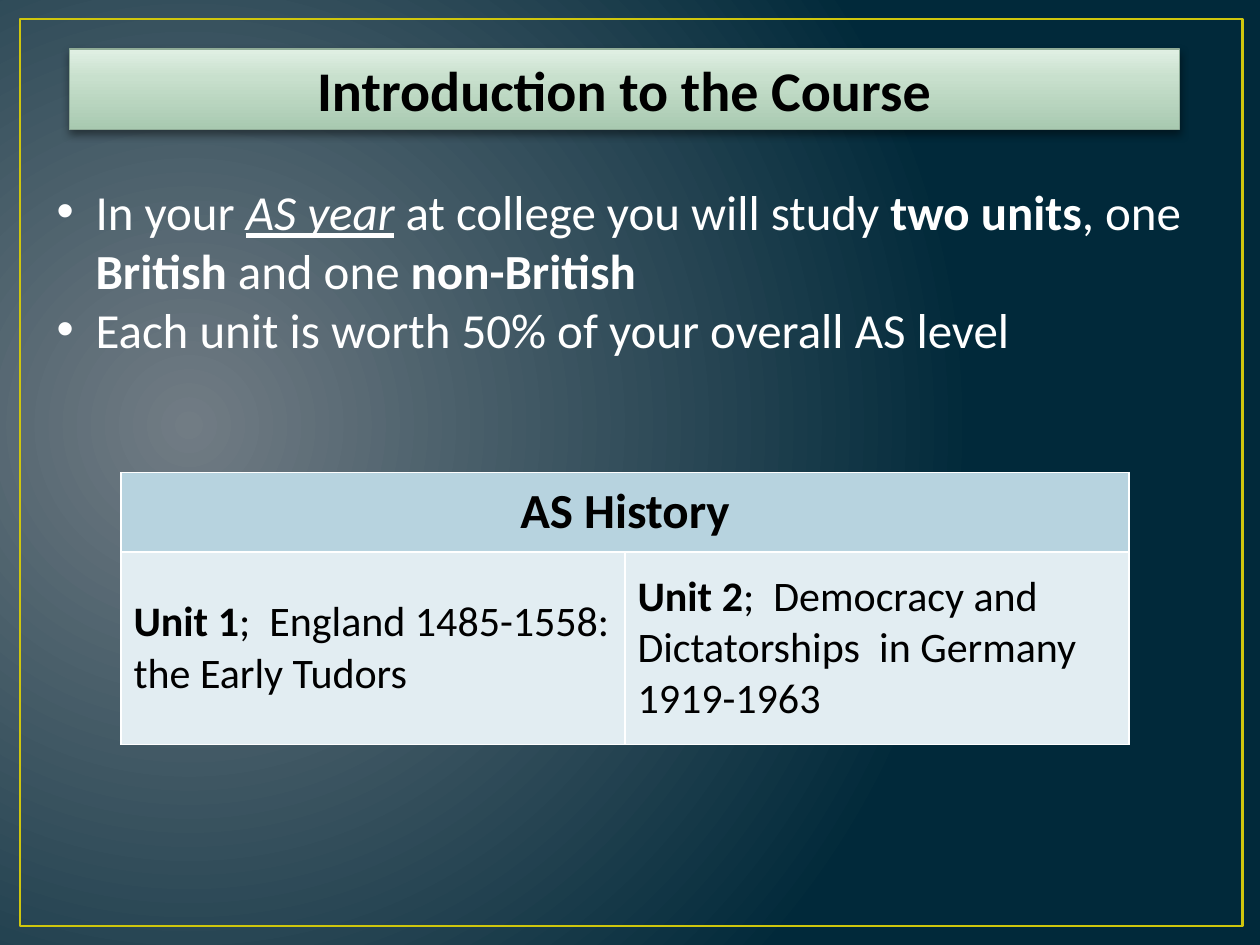
"""Build the course introduction slide with its AS History unit table."""
import pptx
import pptx.dml.color
import pptx.enum.shapes
import pptx.enum.text
import pptx.oxml
import pptx.oxml.ns
import pptx.util
from dataclasses import dataclass

Inches = pptx.util.Inches
Pt = pptx.util.Pt
RGB = pptx.dml.color.RGBColor.from_string
PP_ALIGN = pptx.enum.text.PP_ALIGN
MIDDLE = pptx.enum.text.MSO_ANCHOR.MIDDLE
RECTANGLE = pptx.enum.shapes.MSO_SHAPE.RECTANGLE
NS = pptx.oxml.ns.nsdecls("a")


@dataclass(frozen=True)
class Theme:
    font: str = "Calibri"
    dark: str = "000000"
    light: str = "FFFFFF"
    frame: str = "CFC60D"
    banner_edge: str = "90AC97"
    header: str = "B7D3DF"
    unit: str = "E2EDF2"
    backdrop: tuple = ((0, "717C84"), (100, "01293A"))
    banner: tuple = ((0, "A8C9B0"), (65, "C8E0CD"), (100, "E1F0E4"))
    title_size: int = 32
    body_size: int = 28
    unit_size: int = 24


theme = Theme()


def set_gradient(properties, stops, direction):
    """Replace the solid fill of an element with a gradient."""
    stop_xml = "".join(
        f'<a:gs pos="{position * 1000}"><a:srgbClr val="{color}"/></a:gs>'
        for position, color in stops
    )
    gradient = pptx.oxml.parse_xml(
        f'<a:gradFill {NS} rotWithShape="1"><a:gsLst>{stop_xml}</a:gsLst>{direction}</a:gradFill>'
    )
    properties.replace(properties.find(pptx.oxml.ns.qn("a:solidFill")), gradient)


def add_runs(paragraph, pieces, size, color):
    """Add (text, style) pieces, where style holds any of b, i and u."""
    for text, style in pieces:
        run = paragraph.add_run()
        run.text = text
        run.font.name = theme.font
        run.font.size = Pt(size)
        run.font.color.rgb = RGB(color)
        run.font.bold = "b" in style
        run.font.italic = "i" in style
        run.font.underline = "u" in style


presentation = pptx.Presentation()
presentation.slide_width = Inches(10)
presentation.slide_height = Inches(7.5)
slide = presentation.slides.add_slide(presentation.slide_layouts[6])

slide.background.fill.solid()
set_gradient(
    slide.element.find(".//" + pptx.oxml.ns.qn("p:bgPr")),
    theme.backdrop,
    '<a:path path="circle"><a:fillToRect l="15000" t="50000" r="85000" b="60000"/></a:path>',
)

frame = slide.shapes.add_shape(RECTANGLE, Inches(0.16), Inches(0.15), Inches(9.7), Inches(7.2))
frame.shadow.inherit = False
frame.fill.background()
frame.line.color.rgb = RGB(theme.frame)
frame.line.width = Pt(1.5)

banner = slide.shapes.add_shape(RECTANGLE, Inches(0.55), Inches(0.39), Inches(8.81), Inches(0.64))
banner.fill.solid()
set_gradient(banner.element.spPr, theme.banner, '<a:lin ang="16200000" scaled="1"/>')
banner.line.color.rgb = RGB(theme.banner_edge)
banner.line.width = Pt(0.75)
banner.element.spPr.append(pptx.oxml.parse_xml(
    f'<a:effectLst {NS}><a:outerShdw blurRad="{Pt(5)}" dist="{Pt(2)}" dir="5400000" rotWithShape="0">'
    f'<a:srgbClr val="{theme.dark}"><a:alpha val="43000"/></a:srgbClr></a:outerShdw></a:effectLst>'
))
banner.text_frame.word_wrap = True
title = banner.text_frame.paragraphs[0]
title.alignment = PP_ALIGN.CENTER
add_runs(title, [("Introduction to the Course", "b")], theme.title_size, theme.dark)

bullets = [
    [
        ("In your ", ""), ("AS year", "iu"), (" at college you will study ", ""),
        ("two units", "b"), (", one ", ""), ("British", "b"),
        (" and one ", ""), ("non-British", "b"),
    ],
    [("Each unit is worth 50% of your overall AS level", "")],
]
overview = slide.shapes.add_textbox(Inches(0.35), Inches(1.39), Inches(9.29), Inches(1.99)).text_frame
overview.word_wrap = True
for index, pieces in enumerate(bullets):
    bullet = overview.add_paragraph() if index else overview.paragraphs[0]
    indent = bullet._p.get_or_add_pPr()
    indent.set("marL", str(Inches(0.31)))
    indent.set("indent", str(-Inches(0.31)))
    indent.append(pptx.oxml.parse_xml(f'<a:buFont {NS} typeface="Arial"/>'))
    indent.append(pptx.oxml.parse_xml(f'<a:buChar {NS} char="•"/>'))
    add_runs(bullet, pieces, theme.body_size, theme.light)

units = slide.shapes.add_table(2, 2, Inches(0.96), Inches(3.75), Inches(8), Inches(2.16)).table
for column in units.columns:
    column.width = Inches(4)
for row, height in zip(units.rows, (0.63, 1.53)):
    row.height = Inches(height)
units.cell(0, 0).merge(units.cell(0, 1))

for cell in units.iter_cells():
    borders = cell._tc.get_or_add_tcPr()
    for side in ("lnL", "lnR", "lnT", "lnB"):
        borders.append(pptx.oxml.parse_xml(
            f'<a:{side} {NS} w="{Pt(1)}"><a:solidFill><a:srgbClr val="{theme.light}"/></a:solidFill></a:{side}>'
        ))

contents = [
    (0, 0, [("AS History", "b")], theme.body_size, theme.header, PP_ALIGN.CENTER),
    (1, 0, [("Unit 1", "b"), (";  England 1485-1558: the Early Tudors", "")],
     theme.unit_size, theme.unit, PP_ALIGN.LEFT),
    (1, 1, [("Unit 2", "b"), (";  Democracy and Dictatorships  in Germany 1919-1963", "")],
     theme.unit_size, theme.unit, PP_ALIGN.LEFT),
]
for row, column, pieces, size, fill, alignment in contents:
    cell = units.cell(row, column)
    cell.fill.solid()
    cell.fill.fore_color.rgb = RGB(fill)
    cell.vertical_anchor = MIDDLE
    entry = cell.text_frame.paragraphs[0]
    entry.alignment = alignment
    add_runs(entry, pieces, size, theme.dark)

presentation.save("out.pptx")
